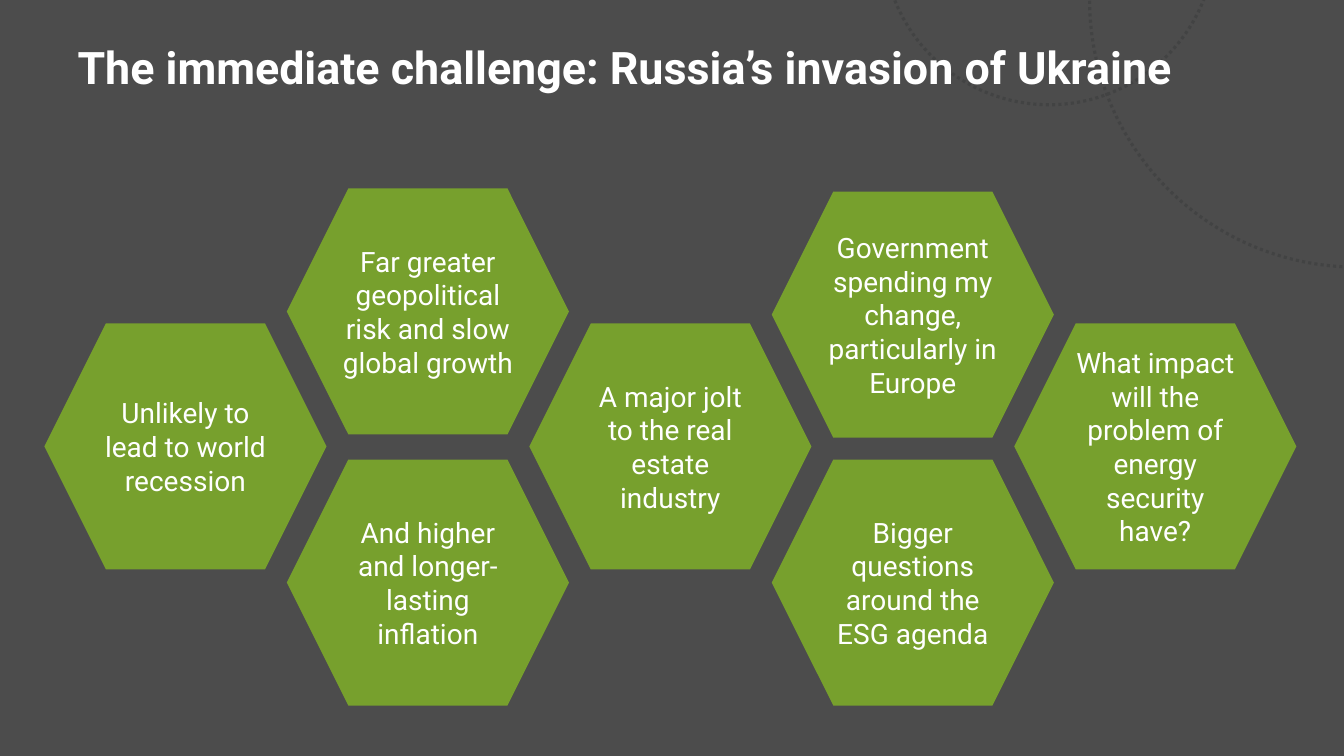
from dataclasses import dataclass

from pptx import Presentation
from pptx.dml.color import RGBColor as Rgb
from pptx.enum.dml import MSO_LINE as Dash
from pptx.enum.shapes import MSO_SHAPE as Kind
from pptx.enum.text import MSO_ANCHOR as Anchor, MSO_AUTO_SIZE as Fit, PP_ALIGN as Align
from pptx.oxml.ns import qn
from pptx.shapes.autoshape import Shape
from pptx.slide import Slide
from pptx.text.text import TextFrame
from pptx.util import Cm, Pt
from lxml.etree import SubElement

HUES = {"veil": "000000", "ring": "E0E2E4", "hex": "77A02D", "text": "FFFFFF"}
FACE = "Roboto"
WIDE, HIGH = 33.87, 19.05
LEFT, STEP = 1.12, 6.11
HEX_W, HEX_H = 7.11, 6.2
MID, LOW = 8.15, 11.58


@dataclass
class Ring:
    left: float
    top: float
    size: float


@dataclass
class Point:
    col: int
    top: float
    text: str


RINGS = [Ring(22.25, -5.74, 8.38), Ring(27.46, -6.73, 13.46)]
POINTS = [
    Point(0, MID, "Unlikely to lead to world recession"),
    Point(1, 4.75, "Far greater geopolitical risk and slow global growth"),
    Point(1, LOW, "And higher and longer-lasting inflation"),
    Point(2, MID, "A major jolt to the real estate industry"),
    Point(3, 4.83, "Government spending my change, particularly in Europe"),
    Point(3, LOW, "Bigger questions around the ESG agenda"),
    Point(4, MID, "What impact will the problem of energy security have?"),
]


def hue(name: str) -> Rgb:
    """Look up a colour by name."""
    return Rgb.from_string(HUES[name])


def add(slide: Slide, kind: Kind, left: float, top: float, wide: float, high: float) -> Shape:
    """Add a preset shape without shadow, sized in centimetres."""
    shape = slide.shapes.add_shape(kind, Cm(left), Cm(top), Cm(wide), Cm(high))
    shape.shadow.inherit = False
    return shape


def fill(shape: Shape, name: str) -> None:
    """Fill a shape with a flat colour and no outline."""
    shape.fill.solid()
    shape.fill.fore_color.rgb = hue(name)
    shape.line.fill.background()


def write(frame: TextFrame, text: str, size: int, bold: bool, align: Align) -> None:
    """Set one white paragraph, centred from top to bottom."""
    frame.text = text
    frame.word_wrap = True
    frame.auto_size = Fit.NONE
    frame.vertical_anchor = Anchor.MIDDLE
    para = frame.paragraphs[0]
    para.alignment = align
    font = para.font
    font.name, font.size, font.bold = FACE, Pt(size), bold
    font.color.rgb = hue("text")


def draw_ring(slide: Slide, ring: Ring) -> None:
    """Draw a dotted circle."""
    shape = add(slide, Kind.OVAL, ring.left, ring.top, ring.size, ring.size)
    shape.fill.background()
    shape.line.color.rgb = hue("ring")
    shape.line.width = Pt(2.25)
    shape.line.dash_style = Dash.ROUND_DOT


def draw_veil(slide: Slide) -> None:
    """Dim the whole slide with a see-through black panel."""
    veil = add(slide, Kind.RECTANGLE, 0, 0, WIDE, HIGH)
    fill(veil, "veil")
    tone = veil.element.spPr.find(qn("a:solidFill"))[0]
    SubElement(tone, qn("a:alpha"), val="70000")


def draw_title(slide: Slide, text: str) -> None:
    """Place the title above the veil."""
    title = slide.shapes.title
    title.element.getparent().append(title.element)
    title.left, title.top = Cm(1.7), Cm(0.76)
    title.width, title.height = Cm(30.48), Cm(2.01)
    write(title.text_frame, text, 32, True, Align.LEFT)
    title.text_frame.paragraphs[0].line_spacing = 0.9


def draw_point(slide: Slide, point: Point) -> None:
    """Draw a hexagon with its message."""
    shape = add(slide, Kind.HEXAGON, LEFT + point.col * STEP, point.top, HEX_W, HEX_H)
    fill(shape, "hex")
    write(shape.text_frame, point.text, 20, False, Align.CENTER)


def main() -> None:
    """Build and save the slide."""
    deck = Presentation()
    deck.slide_width, deck.slide_height = Cm(WIDE), Cm(HIGH)
    slide = deck.slides.add_slide(deck.slide_layouts[5])
    for ring in RINGS:
        draw_ring(slide, ring)
    draw_veil(slide)
    draw_title(slide, "The immediate challenge: Russia’s invasion of Ukraine")
    for point in POINTS:
        draw_point(slide, point)
    deck.save("out.pptx")


if __name__ == "__main__":
    main()
